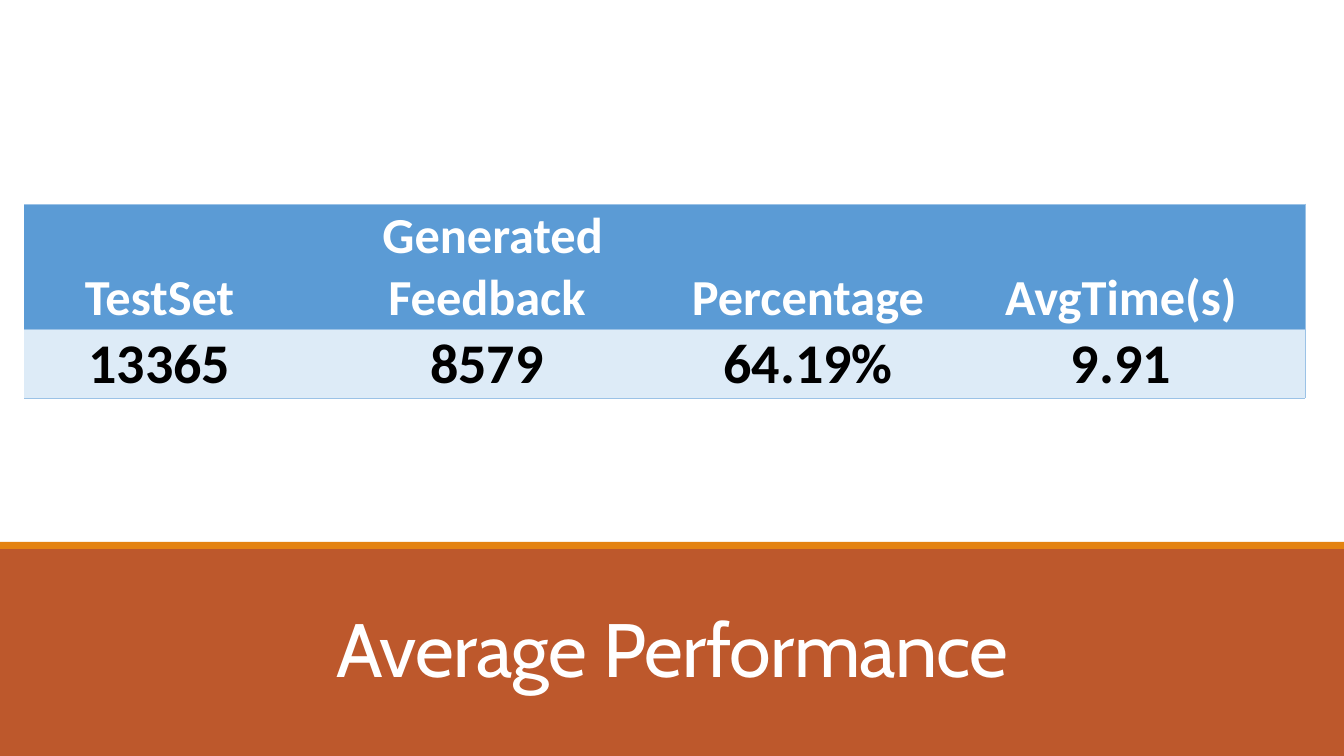
from lxml import etree
from pptx import Presentation
from pptx.dml.color import RGBColor
from pptx.enum.shapes import MSO_SHAPE
from pptx.enum.text import MSO_ANCHOR, PP_ALIGN
from pptx.oxml.ns import qn
from pptx.util import Emu, Pt

RECT = MSO_SHAPE.RECTANGLE
BOTTOM = MSO_ANCHOR.BOTTOM
CENTER = PP_ALIGN.CENTER
EMU_PER_PX = 914400 / 100.8
SLIDE_W, SLIDE_H = 1344, 756
COLORS = {
    "band": "BD582C", "stripe": "E48312", "white": "FFFFFF", "black": "000000",
    "header": "5B9BD5", "body": "DDEBF7", "border": "9BC2E6",
}
COLUMN_WIDTHS = [271, 384, 258, 368]
ROWS = [
    (["TestSet", " Generated Feedback", "Percentage", "AvgTime(s)"], 125, 36, "header", "white"),
    (["13365", "8579", "64.19%", "9.91"], 69, 40, "body", "black"),
]


def px(n):
    """Turn pixels into EMU."""
    return Emu(round(n * EMU_PER_PX))


def rgb(name):
    """Look up a named colour."""
    return RGBColor.from_string(COLORS[name])


def style_paragraph(p, font, size, color, bold=False):
    """Centre a paragraph and set its font."""
    p.alignment = CENTER
    p.font.name = font
    p.font.size = Pt(size)
    p.font.bold = bold
    p.font.color.rgb = rgb(color)


def add_bar(s, x, y, w, h, color):
    """Add a plain filled rectangle."""
    bar = s.shapes.add_shape(RECT, px(x), px(y), px(w), px(h))
    bar.shadow.inherit = False
    bar.fill.solid()
    bar.fill.fore_color.rgb = rgb(color)
    bar.line.fill.background()


def add_title_band(s, x, y, w, h, title):
    """Add the footer band, its top stripe and the title."""
    add_bar(s, x, y + 4, w, h - 4, "band")
    add_bar(s, x, y, w, 7, "stripe")
    sp = s.shapes.add_textbox(px(x + 115), px(y + 60), px(w - 229), px(91))
    tf = sp.text_frame
    tf.word_wrap = True
    tf.vertical_anchor = BOTTOM
    tf.margin_left = tf.margin_right = px(10)
    tf.margin_top = tf.margin_bottom = 0
    p = tf.paragraphs[0]
    p.line_spacing = 0.85
    style_paragraph(p, "Cabin", 54, "white")
    r = p.add_run()
    r.text = title
    r.font._element.set("spc", "-50")


def set_borders(cell, visible):
    """Draw the visible sides of a cell and hide the others."""
    tc_pr = cell._tc.get_or_add_tcPr()
    for i, side in enumerate(("lnL", "lnR", "lnT", "lnB")):
        ln = etree.Element(qn(f"a:{side}"), w=str(Pt(0.5)))
        if side in visible:
            fill = etree.SubElement(ln, qn("a:solidFill"))
            etree.SubElement(fill, qn("a:srgbClr"), val=COLORS["border"])
        else:
            etree.SubElement(ln, qn("a:noFill"))
        tc_pr.insert(i, ln)


def add_results_table(s, x, y, w, h):
    """Add the table of average results."""
    frame = s.shapes.add_table(len(ROWS), len(COLUMN_WIDTHS), px(x), px(y), px(w), px(h))
    table = frame.table
    table.horz_banding = False
    table.first_row = False
    for column, width in zip(table.columns, COLUMN_WIDTHS):
        column.width = px(width)
    last = len(COLUMN_WIDTHS) - 1
    for i, (texts, height, size, fill, color) in enumerate(ROWS):
        table.rows[i].height = px(height)
        for j, text in enumerate(texts):
            cell = table.cell(i, j)
            cell.text = text
            cell.vertical_anchor = BOTTOM
            cell.margin_left = cell.margin_right = cell.margin_top = px(1)
            cell.margin_bottom = 0
            cell.fill.solid()
            cell.fill.fore_color.rgb = rgb(fill)
            style_paragraph(cell.text_frame.paragraphs[0], "Calibri", size, color, True)
            set_borders(cell, ("lnR", "lnT", "lnB") if j == last else ("lnT", "lnB"))


def main():
    """Build and save the slide."""
    prs = Presentation()
    prs.slide_width, prs.slide_height = px(SLIDE_W), px(SLIDE_H)
    s = prs.slides.add_slide(prs.slide_layouts[6])
    add_title_band(s, 0, 542, SLIDE_W, SLIDE_H - 542, "Average Performance")
    add_results_table(s, 24, 204, sum(COLUMN_WIDTHS), sum(row[1] for row in ROWS))
    prs.save("out.pptx")


if __name__ == "__main__":
    main()
